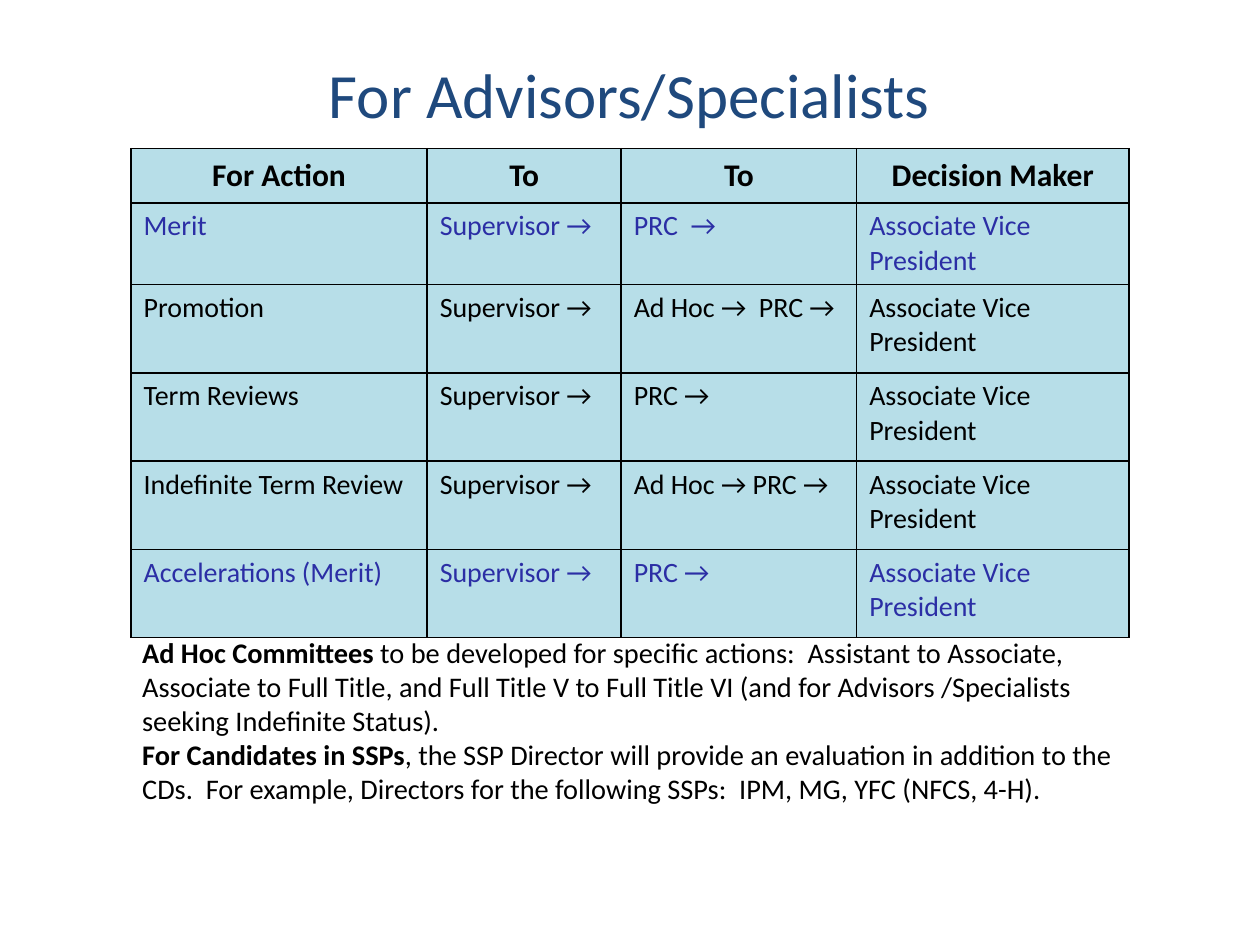
from lxml.etree import SubElement
from pptx import Presentation
from pptx.dml.color import RGBColor
from pptx.enum.text import MSO_ANCHOR, MSO_AUTO_SIZE, PP_ALIGN
from pptx.oxml.ns import qn
from pptx.util import Inches, Pt

COLORS = {"title": "1F497D", "text": "000000", "merit": "2B2EA5",
          "cell": "B7DEE8", "border": "000000"}
COLUMN_WIDTHS = [2.35, 1.54, 1.87, 2.16]
ROW_HEIGHTS = [0.43, 0.65] + [0.7] * 4
HEADERS = ["For Action", "To", "To", "Decision Maker"]
ACTIONS = [
    ("Merit", "PRC  →", "merit"),
    ("Promotion", "Ad Hoc →  PRC →", "text"),
    ("Term Reviews", "PRC →", "text"),
    ("Indefinite Term Review", "Ad Hoc → PRC →", "text"),
    ("Accelerations (Merit)", "PRC →", "merit"),
]
NOTES = [
    ("Ad Hoc Committees",
     " to be developed for specific actions:  Assistant to Associate, Associate to "
     "Full Title, and Full Title V to Full Title VI (and for Advisors /Specialists "
     "seeking Indefinite Status)."),
    ("For Candidates in SSPs",
     ", the SSP Director will provide an evaluation in addition to the CDs.  "
     "For example, Directors for the following SSPs:  IPM, MG, YFC (NFCS, 4-H)."),
]


def add_text(p, text, size=16, color="text", bold=False, align=PP_ALIGN.LEFT):
    p.alignment = align
    r = p.add_run()
    r.text = text
    r.font.name = "Calibri"
    r.font.size = Pt(size)
    r.font.bold = bold
    r.font.color.rgb = RGBColor.from_string(COLORS[color])


def place(sp, left, top, width, height):
    sp.left, sp.top = Inches(left), Inches(top)
    sp.width, sp.height = Inches(width), Inches(height)


def add_title(s, text):
    sp = s.shapes.title
    place(sp, 1.03, 0.49, 7.93, 0.5)
    tf = sp.text_frame
    tf.auto_size = MSO_AUTO_SIZE.NONE
    tf.vertical_anchor = MSO_ANCHOR.MIDDLE
    add_text(tf.paragraphs[0], text, size=36, color="title", align=PP_ALIGN.CENTER)


def style_cell(cell):
    props = cell._tc.get_or_add_tcPr()
    for side in ("a:lnL", "a:lnR", "a:lnT", "a:lnB"):
        line = SubElement(props, qn(side), w=str(Pt(1)))
        fill = SubElement(line, qn("a:solidFill"))
        SubElement(fill, qn("a:srgbClr"), val=COLORS["border"])
    cell.fill.solid()
    cell.fill.fore_color.rgb = RGBColor.from_string(COLORS["cell"])


def add_review_table(s):
    table = s.shapes.add_table(
        len(ROW_HEIGHTS), len(COLUMN_WIDTHS), Inches(1.04), Inches(1.18),
        Inches(sum(COLUMN_WIDTHS)), Inches(sum(ROW_HEIGHTS))).table
    for column, width in zip(table.columns, COLUMN_WIDTHS):
        column.width = Inches(width)
    for row, height in zip(table.rows, ROW_HEIGHTS):
        row.height = Inches(height)
    for cell in table.iter_cells():
        style_cell(cell)
    for cell, header in zip(table.rows[0].cells, HEADERS):
        cell.vertical_anchor = MSO_ANCHOR.MIDDLE
        add_text(cell.text_frame.paragraphs[0], header, size=18, bold=True,
                 align=PP_ALIGN.CENTER)
    for i, (action, review, color) in enumerate(ACTIONS, 1):
        texts = [action, "Supervisor →", review, "Associate Vice President"]
        for cell, text in zip(table.rows[i].cells, texts):
            add_text(cell.text_frame.paragraphs[0], text, color=color)


def add_notes(s):
    sp = s.shapes.add_textbox(Inches(1.03), Inches(5.03), Inches(7.92), Inches(1.37))
    tf = sp.text_frame
    tf.word_wrap = True
    tf.margin_top = tf.margin_bottom = 0
    tf.vertical_anchor = MSO_ANCHOR.MIDDLE
    for i, (lead, detail) in enumerate(NOTES):
        p = tf.add_paragraph() if i else tf.paragraphs[0]
        add_text(p, lead, size=16.2, bold=True)
        add_text(p, detail, size=16.2)


def main():
    prs = Presentation()
    prs.slide_width, prs.slide_height = Inches(10), Inches(7.5)
    s = prs.slides.add_slide(prs.slide_layouts[5])
    add_title(s, "For Advisors/Specialists")
    add_review_table(s)
    add_notes(s)
    prs.save("out.pptx")


if __name__ == "__main__":
    main()
